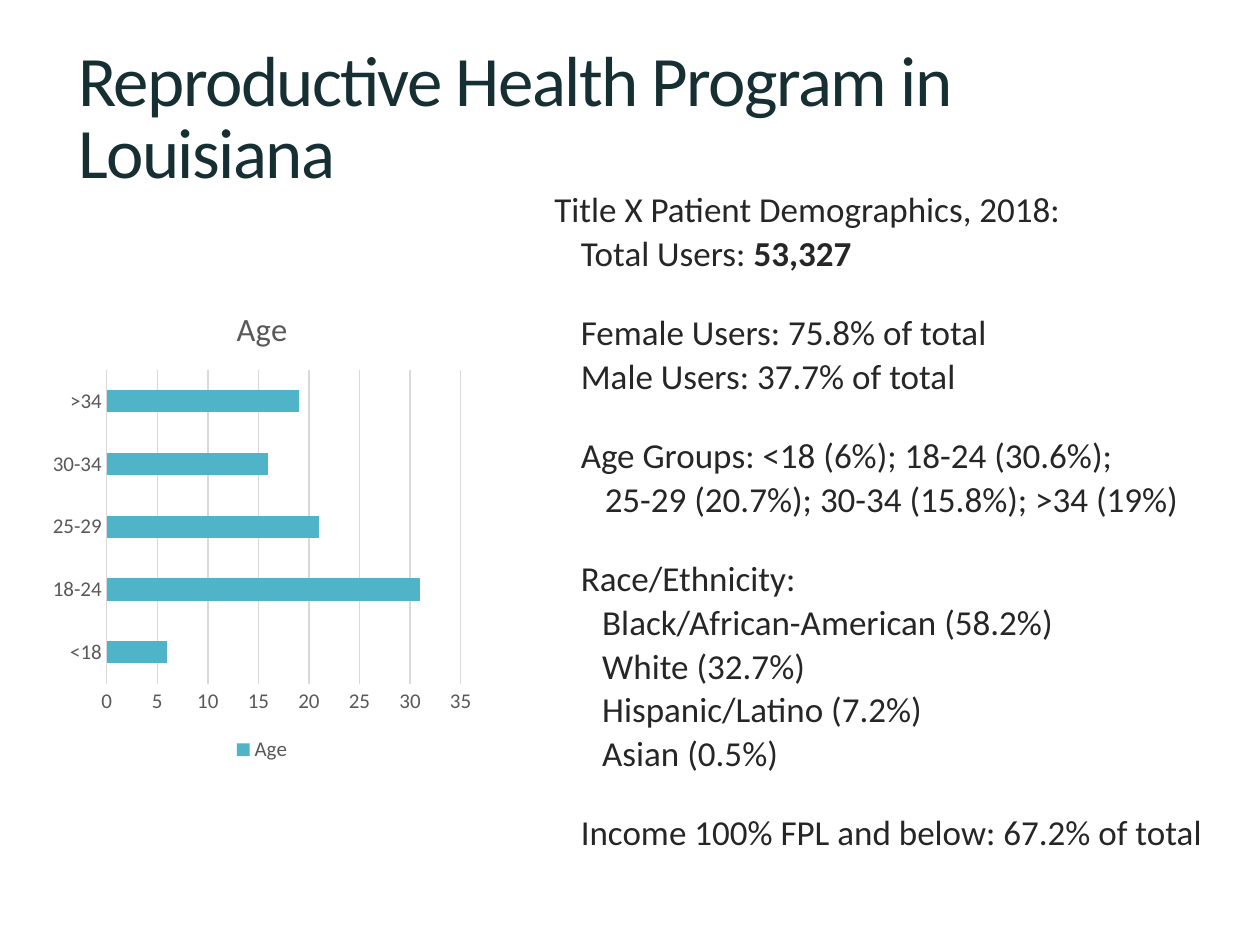
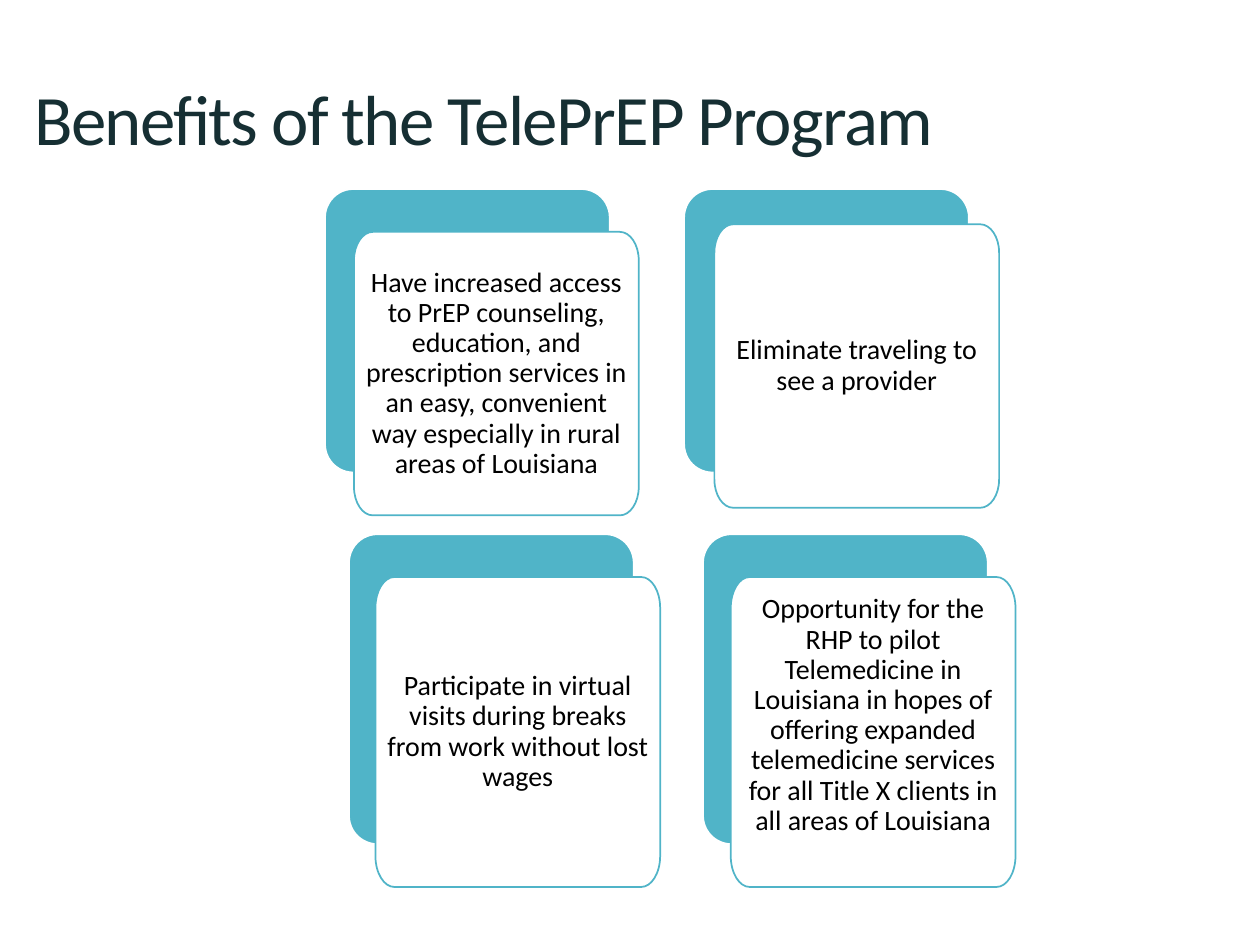
"""Build two slides on reproductive health and telemedicine in Louisiana."""
import lxml.etree
import pptx
import pptx.chart.data
import pptx.dml.color
import pptx.enum.chart
import pptx.enum.shapes
import pptx.enum.text
import pptx.oxml.ns
import pptx.util

EMU_PER_PX = 9144
CARD_WIDTH = 226


def px(length):
    return pptx.util.Emu(round(length * EMU_PER_PX))


def color(value):
    return pptx.dml.color.RGBColor.from_string(value)


class SlideBuilder:
    font = "Calibri"
    ink = "162F33"
    body_ink = "262626"
    chart_ink = "595959"
    grid = "D9D9D9"
    accent = "50B4C8"
    white = "FFFFFF"
    black = "000000"

    def __init__(self, deck):
        self.deck = deck
        self.page = None

    def style_font(self, font, size, ink, bold=False):
        font.name = self.font
        font.size = pptx.util.Pt(size)
        font.bold = bold
        font.color.rgb = color(ink)

    def set_insets(self, frame, side, top, bottom):
        frame.margin_left = frame.margin_right = px(side)
        frame.margin_top, frame.margin_bottom = px(top), px(bottom)
        frame.word_wrap = True

    def new_page(self, title, left, top):
        self.page = self.deck.slides.add_slide(self.deck.slide_layouts[5])
        box = self.page.shapes.title
        box.left, box.top, box.width, box.height = px(left), px(top), px(884), px(136)
        frame = box.text_frame
        frame.text = title
        frame.auto_size = pptx.enum.text.MSO_AUTO_SIZE.NONE
        frame.vertical_anchor = pptx.enum.text.MSO_ANCHOR.MIDDLE
        para = frame.paragraphs[0]
        para.alignment = pptx.enum.text.PP_ALIGN.LEFT
        para.line_spacing = 0.85
        span = para.runs[0]
        self.style_font(span.font, 40.5, self.ink)
        span.font._element.set("spc", "-90")

    def paint(self, shape, fill, line):
        shape.shadow.inherit = False
        shape.fill.solid()
        shape.fill.fore_color.rgb = color(fill)
        shape.line.color.rgb = color(line)
        shape.line.width = pptx.util.Pt(1)

    def add_outline(self, lines, left, top, width, height):
        box = self.page.shapes.add_textbox(px(left), px(top), px(width), px(height))
        frame = box.text_frame
        self.set_insets(frame, 7, 4, 4)
        for index, (indent, space, texts) in enumerate(lines):
            para = frame.paragraphs[0] if index == 0 else frame.add_paragraph()
            para.line_spacing = 0.85
            para.space_before = pptx.util.Pt(space)
            para._p.get_or_add_pPr().set("marL", str(px(indent)))
            for position, text in enumerate(texts):
                span = para.add_run()
                span.text = text
                self.style_font(span.font, 20, self.body_ink, position == 1)

    def add_bar_chart(self, name, values, left, top, width, height):
        data = pptx.chart.data.CategoryChartData()
        data.categories = list(values)
        data.add_series(name, list(values.values()))
        chart = self.page.shapes.add_chart(
            pptx.enum.chart.XL_CHART_TYPE.BAR_CLUSTERED,
            px(left), px(top), px(width), px(height), data).chart
        self.style_font(chart.font, 10, self.black)
        chart.has_title = True
        chart.chart_title.include_in_layout = False
        title = chart.chart_title.text_frame
        title.text = name
        self.style_font(title.paragraphs[0].runs[0].font, 18.6, self.chart_ink)
        chart.has_legend = True
        chart.legend.position = pptx.enum.chart.XL_LEGEND_POSITION.BOTTOM
        chart.legend.include_in_layout = False
        self.style_font(chart.legend.font, 12, self.chart_ink)
        for axis in (chart.category_axis, chart.value_axis):
            axis.major_tick_mark = pptx.enum.chart.XL_TICK_MARK.NONE
            axis.minor_tick_mark = pptx.enum.chart.XL_TICK_MARK.NONE
            self.style_font(axis.tick_labels.font, 12, self.chart_ink)
        value_axis = chart.value_axis
        value_axis.minimum_scale, value_axis.maximum_scale = 0, 35
        value_axis.major_unit = 5
        value_axis.has_major_gridlines = True
        value_axis.format.line.fill.background()
        for line in (value_axis.major_gridlines.format.line,
                     chart.category_axis.format.line):
            line.color.rgb = color(self.grid)
            line.width = pptx.util.Pt(0.75)
        plot = chart.plots[0]
        plot.gap_width = 182
        plot.vary_by_categories = False
        fill = plot.series[0].format.fill
        fill.solid()
        fill.fore_color.rgb = color(self.accent)

    def round_corner(self, segment, start, corner, end):
        tag = pptx.oxml.ns.qn
        curve = lxml.etree.Element(tag("a:cubicBezTo"))
        handles = [tuple(round(a + 0.55 * (c - a)) for a, c in zip(anchor, corner))
                   for anchor in (start, end)]
        for x, y in (*handles, end):
            lxml.etree.SubElement(curve, tag("a:pt"), x=str(x), y=str(y))
        segment.getparent().replace(segment, curve)

    def add_panel(self, left, top, width, height):
        radius_x, radius_y = px(15), px(height / 10)
        right, bottom = px(width), px(height)
        points = [(0, radius_y), (radius_x, 0),
                  (right - radius_x, 0), (right, radius_y),
                  (right, bottom - radius_y), (right - radius_x, bottom),
                  (radius_x, bottom), (0, bottom - radius_y)]
        corners = [(0, 0), (right, 0), (right, bottom), (0, bottom)]
        builder = self.page.shapes.build_freeform(*points[0], scale=1.0)
        builder.add_line_segments(points[1:], close=True)
        panel = builder.convert_to_shape(px(left), px(top))
        segments = list(panel._element.iter(pptx.oxml.ns.qn("a:lnTo")))
        for index, corner in enumerate(corners):
            start, end = points[2 * index:2 * index + 2]
            self.round_corner(segments[2 * index], start, corner, end)
        self.paint(panel, self.white, self.accent)
        return panel

    def add_card(self, text, back, front, height, bottom_inset):
        tile = self.page.shapes.add_shape(
            pptx.enum.shapes.MSO_SHAPE.ROUNDED_RECTANGLE,
            px(back[0]), px(back[1]), px(CARD_WIDTH), px(height))
        tile.adjustments[0] = 0.1
        self.paint(tile, self.accent, self.white)
        frame = self.add_panel(*front, CARD_WIDTH, height).text_frame
        self.set_insets(frame, 8, 9, bottom_inset)
        frame.vertical_anchor = pptx.enum.text.MSO_ANCHOR.MIDDLE
        frame.text = text
        para = frame.paragraphs[0]
        para.alignment = pptx.enum.text.PP_ALIGN.CENTER
        para.line_spacing = 0.9
        self.style_font(para.runs[0].font, 16, self.black)


def build_demographics(builder):
    builder.new_page("Reproductive Health Program in Louisiana", 52, 28)
    ages = {"<18": 6, "18-24": 31, "25-29": 21, "30-34": 16, ">34": 19}
    builder.add_bar_chart("Age", ages, 35, 225, 346, 384)
    near, gap = 4.5, 25
    builder.add_outline([
        (7, 0, ["Title X Patient Demographics, 2018:"]),
        (28, near, ["Total Users: ", "53,327"]),
        (28, gap, ["Female Users: 75.8% of total"]),
        (28, near, ["Male Users: 37.7% of total"]),
        (28, gap, ["Age Groups: <18 (6%); 18-24 (30.6%);"]),
        (47, near, ["25-29 (20.7%); 30-34 (15.8%); >34 (19%)"]),
        (28, gap, ["Race/Ethnicity:"]),
        (45, near, ["Black/African-American (58.2%)"]),
        (45, near, ["White (32.7%)"]),
        (45, near, ["Hispanic/Latino (7.2%)"]),
        (45, near, ["Asian (0.5%)"]),
        (28, gap, ["Income 100% FPL and below: 67.2% of total"]),
    ], 426, 150, 557, 572)


def build_benefits(builder):
    builder.new_page("Benefits of the TelePrEP Program", 17, 30)
    cards = [
        ("Have increased access to PrEP counseling, education, and prescription "
         "services in an easy, convenient way especially in rural areas of Louisiana",
         (258, 150), (281, 184), 225, 9),
        ("Eliminate traveling to see a provider", (543, 150), (567, 178), 225, 9),
        ("Participate in virtual visits during breaks from work without lost wages",
         (277, 424), (298, 458), 246, 9),
        ("Opportunity for the RHP to pilot Telemedicine in Louisiana in hopes of "
         "offering expanded telemedicine services for all Title X clients in all "
         "areas of Louisiana", (558, 424), (580, 458), 246, 35),
    ]
    for card in cards:
        builder.add_card(*card)


def main():
    deck = pptx.Presentation()
    deck.slide_width, deck.slide_height = px(1000), px(750)
    builder = SlideBuilder(deck)
    build_demographics(builder)
    build_benefits(builder)
    deck.save("out.pptx")


if __name__ == "__main__":
    main()
